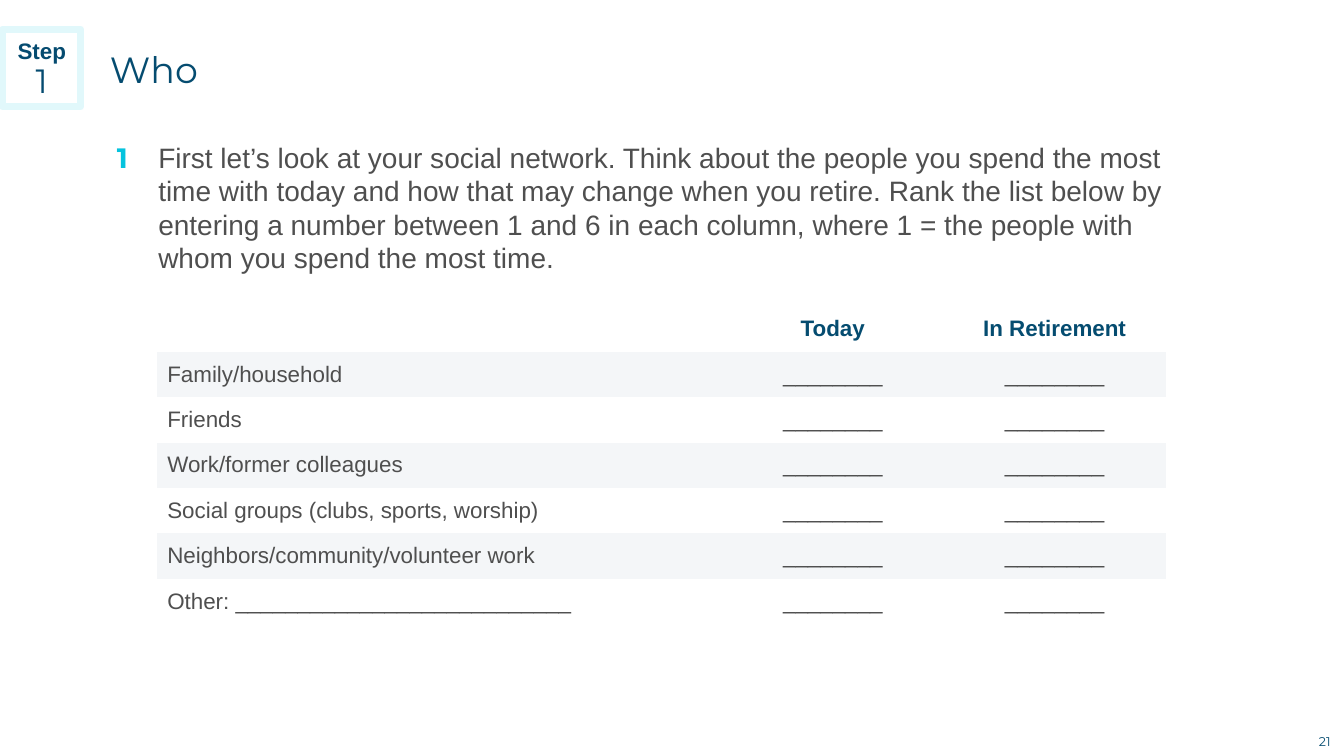
from pptx import Presentation
from pptx.dml.color import RGBColor
from pptx.enum.shapes import MSO_SHAPE
from pptx.enum.text import MSO_ANCHOR, MSO_AUTO_SIZE, PP_ALIGN
from pptx.util import Inches, Pt

NAVY, GRAY, CYAN = "054C70", "4F4F4F", "05C3DE"
WHITE, PALE, BAND = "FFFFFF", "E1F8FB", "F4F6F8"
BLANK = "_" * 8
GROUPS = [
    "Family/household",
    "Friends",
    "Work/former colleagues",
    "Social groups (clubs, sports, worship)",
    "Neighbors/community/volunteer work",
    "Other: " + "_" * 27,
]
PROMPT = (
    "First let’s look at your social network. Think about the people you "
    "spend the most time with today and how that may change when you retire. "
    "Rank the list below by entering a number between 1 and 6 in each column, "
    "where 1 = the people with whom you spend the most time."
)


def paint(target, color):
    target.solid()
    target.fore_color.rgb = RGBColor.from_string(color)


def write(para, text, size=16, color=GRAY, font="Arial", bold=False,
          align=PP_ALIGN.LEFT, after=0, line=None):
    run = para.add_run()
    run.text = text
    run.font.size = Pt(size)
    run.font.name = font
    run.font.bold = bold
    run.font.color.rgb = RGBColor.from_string(color)
    para.alignment = align
    para.space_after = Pt(after)
    if line:
        para.line_spacing = line


def frame(shape, anchor=MSO_ANCHOR.TOP, top=0):
    box = shape.text_frame
    box.word_wrap = True
    box.auto_size = MSO_AUTO_SIZE.NONE
    box.vertical_anchor = anchor
    box.margin_left = box.margin_right = box.margin_bottom = 0
    box.margin_top = Inches(top)
    return box


def add_title(slide, text):
    title = slide.shapes.title
    title.left, title.top = Inches(1.09), Inches(0.28)
    title.width, title.height = Inches(11.16), Inches(0.81)
    box = frame(title, MSO_ANCHOR.MIDDLE)
    write(box.paragraphs[0], text, size=26, color=NAVY, font="Montserrat")


def add_text(slide, area, text, anchor=MSO_ANCHOR.TOP, **style):
    shape = slide.shapes.add_textbox(*map(Inches, area))
    write(frame(shape, anchor).paragraphs[0], text, **style)


def add_badge(slide, label, number):
    badge = slide.shapes.add_shape(
        MSO_SHAPE.RECTANGLE, Inches(0.03), Inches(0.29), Inches(0.77), Inches(0.77))
    badge.shadow.inherit = False
    paint(badge.fill, WHITE)
    paint(badge.line.fill, PALE)
    badge.line.width = Pt(5)
    box = frame(badge, MSO_ANCHOR.MIDDLE, top=0.05)
    style = dict(color="054B70", align=PP_ALIGN.CENTER, line=0.9)
    write(box.paragraphs[0], label, bold=True, **style)
    write(box.add_paragraph(), number, size=24, font="Montserrat", **style)


def add_grid(slide, rows, widths, height):
    grid = slide.shapes.add_table(
        len(rows), len(widths), Inches(1.56), Inches(3.04),
        Inches(sum(widths)), Inches(height * len(rows))).table
    grid.first_row = grid.horz_banding = False
    # Plain table style without grid lines
    grid._tbl.tblPr[0].text = "{2D5ABB26-0587-4C30-8999-92F81FD0307C}"
    for col, width in zip(grid.columns, widths):
        col.width = Inches(width)
    for r, row in enumerate(rows):
        grid.rows[r].height = Inches(height)
        for c, text in enumerate(row):
            cell = grid.cell(r, c)
            cell.vertical_anchor = MSO_ANCHOR.MIDDLE
            if r % 2:
                paint(cell.fill, BAND)
            else:
                cell.fill.background()
            if text:
                write(cell.text_frame.paragraphs[0], text, bold=r == 0,
                      color=GRAY if r else NAVY,
                      align=PP_ALIGN.CENTER if c else PP_ALIGN.LEFT)


def main():
    deck = Presentation()
    deck.slide_width, deck.slide_height = Inches(13.33), Inches(7.5)
    slide = deck.slides.add_slide(deck.slide_layouts[5])

    # Page number and heading
    add_text(slide, (12.97, 7.23, 0.34, 0.25), "21", MSO_ANCHOR.MIDDLE,
             size=9, color=NAVY, font="Montserrat", align=PP_ALIGN.CENTER)
    add_title(slide, "Who")

    # Numbered instruction
    add_text(slide, (1.57, 1.39, 10.3, 1.35), PROMPT, size=20, after=10)
    add_text(slide, (1.16, 1.39, 0.4, 0.34), "1", size=20, color=CYAN,
             font="Montserrat", bold=True, after=10)

    # Ranking table
    rows = [("", "Today", "In Retirement")]
    rows += [(group, BLANK, BLANK) for group in GROUPS]
    add_grid(slide, rows, (5.6, 2.2, 2.2), 0.45)

    # Step marker
    add_badge(slide, "Step", "1")
    deck.save("out.pptx")


if __name__ == "__main__":
    main()
